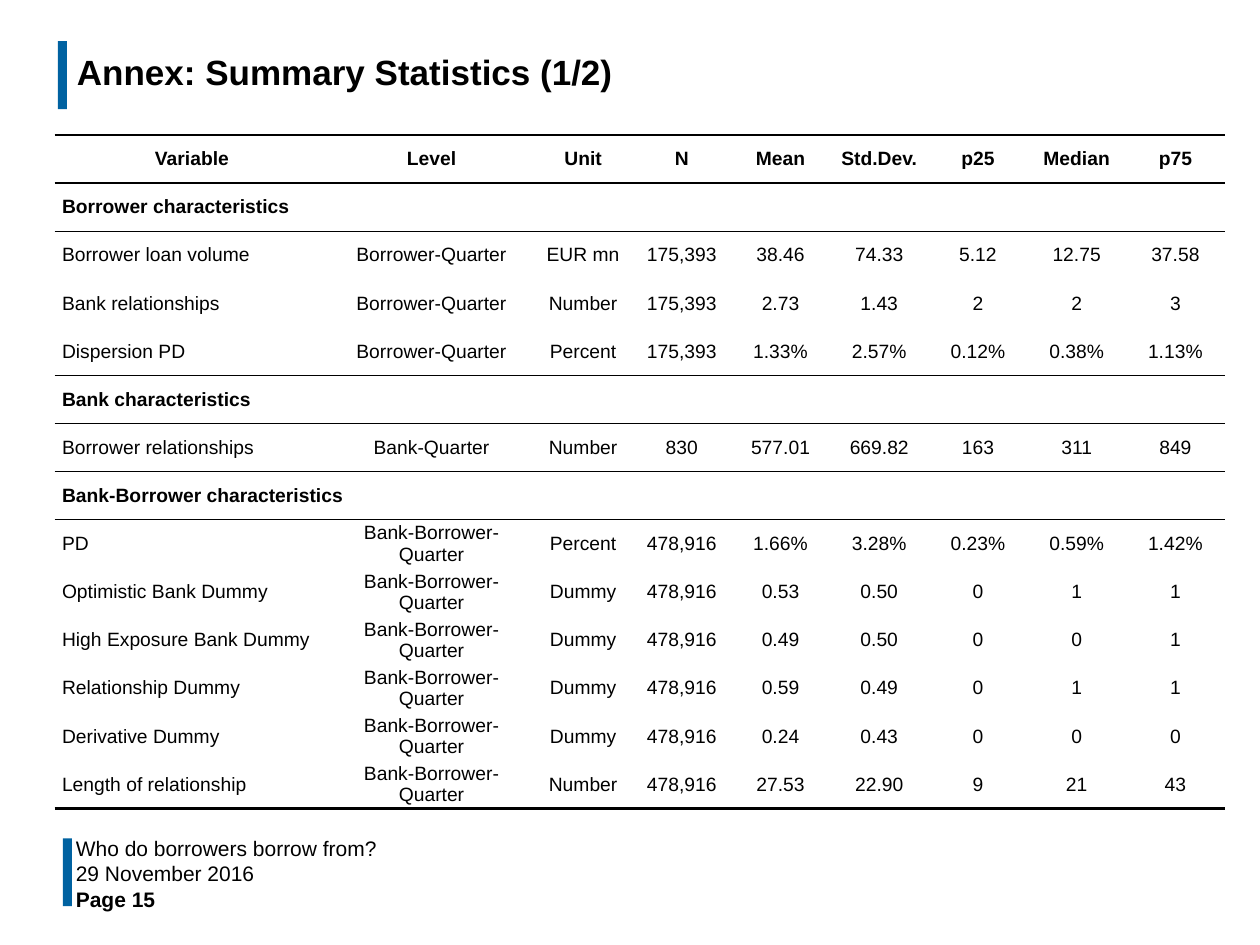
"""Build the annex slide with the summary statistics table."""
from lxml.etree import SubElement
from pptx import Presentation
from pptx.dml.color import RGBColor
from pptx.enum.shapes import MSO_SHAPE as SHAPE
from pptx.enum.text import MSO_ANCHOR as ANCHOR, MSO_AUTO_SIZE as AUTO, PP_ALIGN as ALIGN
from pptx.oxml.ns import qn
from pptx.util import Cm, Pt

TITLE = "Annex: Summary Statistics (1/2)"
FOOTER = [
    ("Who do borrowers borrow from?", 22.56, False),
    ("29 November 2016", 5.87, False),
    ("Page 15", 5.87, True),
]
HEADER = ["Variable", "Level", "Unit", "N", "Mean", "Std.Dev.", "p25", "Median", "p75"]
SECTIONS = [
    ("Borrower characteristics", "Borrower-Quarter", "175,393", [
        ("Borrower loan volume", "EUR mn", "38.46", "74.33", "5.12", "12.75", "37.58"),
        ("Bank relationships", "Number", "2.73", "1.43", "2", "2", "3"),
        ("Dispersion PD", "Percent", "1.33%", "2.57%", "0.12%", "0.38%", "1.13%"),
    ]),
    ("Bank characteristics", "Bank-Quarter", "830", [
        ("Borrower relationships", "Number", "577.01", "669.82", "163", "311", "849"),
    ]),
    ("Bank-Borrower characteristics", "Bank-Borrower-Quarter", "478,916", [
        ("PD", "Percent", "1.66%", "3.28%", "0.23%", "0.59%", "1.42%"),
        ("Optimistic Bank Dummy", "Dummy", "0.53", "0.50", "0", "1", "1"),
        ("High Exposure Bank Dummy", "Dummy", "0.49", "0.50", "0", "0", "1"),
        ("Relationship Dummy", "Dummy", "0.59", "0.49", "0", "1", "1"),
        ("Derivative Dummy", "Dummy", "0.24", "0.43", "0", "0", "0"),
        ("Length of relationship", "Number", "27.53", "22.90", "9", "21", "43"),
    ]),
]
COL_WIDTHS = [5.54, 4.12] + [1.99] * 7
ROW_HEIGHT = 0.97
BARS = [(1.17, 0.83), (1.27, 16.9)]
THICK, THIN = 1.5, 0.75
BLUE = RGBColor(0x00, 0x62, 0xA1)
BLACK = RGBColor(0x00, 0x00, 0x00)
NO_STYLE = "{2D5ABB26-0587-4C30-8999-92F81FD0307C}"


def style(p, size, bold=False, align=ALIGN.LEFT):
    p.alignment = align
    p.font.name = "Arial"
    p.font.size = Pt(size)
    p.font.bold = bold
    p.font.color.rgb = BLACK


def set_frame(tf, x, y):
    tf.word_wrap = True
    tf.auto_size = AUTO.NONE
    tf.vertical_anchor = ANCHOR.MIDDLE
    tf.margin_left = tf.margin_right = Cm(x)
    tf.margin_top = tf.margin_bottom = Cm(y)


def add_bars(s):
    for left, top in BARS:
        sp = s.shapes.add_shape(SHAPE.RECTANGLE, Cm(left), Cm(top), Cm(0.18), Cm(1.37))
        sp.shadow.inherit = False
        sp.fill.solid()
        sp.fill.fore_color.rgb = BLUE
        sp.line.fill.background()


def add_title(s):
    sp = s.shapes.title
    sp.left, sp.top, sp.width, sp.height = Cm(1.3), Cm(0.71), Cm(23.6), Cm(1.6)
    set_frame(sp.text_frame, 0.25, 0.13)
    p = sp.text_frame.paragraphs[0]
    p.text = TITLE
    p.line_spacing = Pt(20.4)
    style(p, 20, True)


def add_footer(s):
    for i, (text, width, bold) in enumerate(FOOTER):
        sp = s.shapes.add_textbox(Cm(1.3), Cm(16.87 + 0.51 * i), Cm(width), Cm(0.46))
        set_frame(sp.text_frame, 0.23, 0.1)
        p = sp.text_frame.paragraphs[0]
        p.text = text
        style(p, 12, bold)


def add_border(cell, tag, width):
    ln = SubElement(cell._tc.get_or_add_tcPr(), qn(tag), w=str(Pt(width)))
    fill = SubElement(ln, qn("a:solidFill"))
    SubElement(fill, qn("a:srgbClr"), val=str(BLACK))


def table_rows():
    rows = [HEADER]
    for name, level, n, items in SECTIONS:
        rows.append([name])
        rows += [[label, level, unit, n, *stats] for label, unit, *stats in items]
    return rows


def add_stats_table(s):
    rows = table_rows()
    frame = s.shapes.add_table(len(rows), len(HEADER), Cm(1.1), Cm(2.72),
                               Cm(sum(COL_WIDTHS)), Cm(ROW_HEIGHT * len(rows)))
    table = frame.table
    table.horz_banding = False
    table._tbl.tblPr.find(qn("a:tableStyleId")).text = NO_STYLE
    for column, width in zip(table.columns, COL_WIDTHS):
        column.width = Cm(width)
    for r, row in enumerate(rows):
        table.rows[r].height = Cm(ROW_HEIGHT)
        header, section, last = r == 0, len(row) == 1, r == len(rows) - 1
        top = THICK if header else THIN if section else None
        bottom = THICK if last else THIN if header or section else None
        if section:
            table.cell(r, 0).merge(table.cell(r, len(HEADER) - 1))
        for c in range(len(HEADER)):
            cell = table.cell(r, c)
            for tag, width in (("a:lnT", top), ("a:lnB", bottom)):
                if width:
                    add_border(cell, tag, width)
            cell.fill.background()
            cell.vertical_anchor = ANCHOR.MIDDLE
            cell.margin_left = cell.margin_right = Cm(0.15)
            cell.margin_top = cell.margin_bottom = 0
            p = cell.text_frame.paragraphs[0]
            if c < len(row):
                p.text = row[c]
            style(p, 11, header or section, ALIGN.CENTER if header or c else ALIGN.LEFT)


def main():
    prs = Presentation()
    prs.slide_width, prs.slide_height = Cm(25.4), Cm(19.05)
    s = prs.slides.add_slide(prs.slide_layouts[5])
    add_bars(s)
    add_title(s)
    add_footer(s)
    add_stats_table(s)
    prs.save("out.pptx")


if __name__ == "__main__":
    main()
